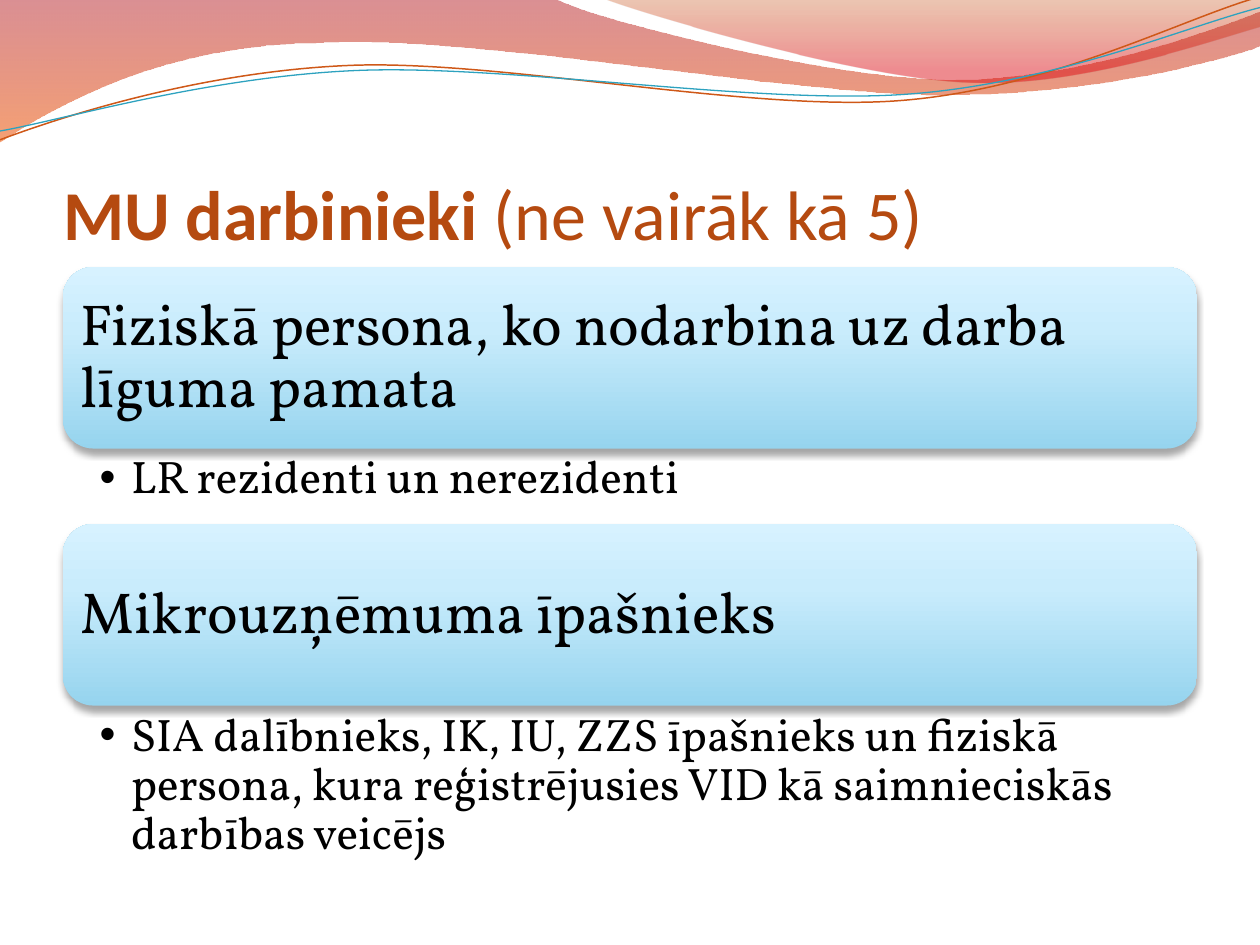
from pptx import Presentation
from pptx.dml.color import RGBColor
from pptx.enum.shapes import MSO_SHAPE
from pptx.enum.text import MSO_ANCHOR, MSO_AUTO_SIZE, PP_ALIGN
from pptx.oxml import parse_xml
from pptx.oxml.ns import nsdecls
from pptx.util import Inches, Pt

BODY_FONT = "Vollkorn"

# Wave outlines: a two-number step is a straight line, a six-number step a Bezier curve
BROAD_WAVE = [(0, -0.01), (4.4, -0.01), (4.76, 0.17, 6.64, 0.63, 7.58, 0.63),
              (8.53, 0.63, 9.58, 0.26, 10, 0.09), (10.01, 0.36),
              (9.83, 0.44, 8.7, 0.76, 7.46, 0.75), (6.22, 0.75, 3.82, 0.28, 2.57, 0.34),
              (1.29, 0.35, 0.46, 0.83, -0.01, 1.13), (0, -0.01)]
RIGHT_WAVE = [(4.79, -0.01), (5.09, 0.11, 6.82, 0.62, 7.69, 0.65),
              (8.56, 0.69, 9.61, 0.32, 10, 0.21), (10, 0), (4.79, -0.01)]
ORANGE_CURVE = [(0, 1.11), (0.48, 0.93, 1.58, 0.57, 2.77, 0.52),
                (3.95, 0.47, 5.93, 0.89, 7.13, 0.8), (8.33, 0.71, 9.38, 0.15, 9.98, -0.02)]
BLUE_CURVE = [(0, 1.04), (0.47, 0.96, 1.64, 0.61, 2.83, 0.56),
              (4.03, 0.51, 5.97, 0.83, 7.17, 0.75), (8.36, 0.67, 9.41, 0.21, 10, 0.06)]

BOX_GRADIENT = [(0, "96D4EE", 100), (65, "C9ECFC", 100), (100, "D7F2FF", 100)]

# Heading, detail, height of the detail
SECTIONS = [
    ("Fiziskā persona, ko nodarbina uz darba līguma pamata",
     "LR rezidenti un nerezidenti", 0.6),
    ("Mikrouzņēmuma īpašnieks",
     "SIA dalībnieks, IK, IU, ZZS īpašnieks un fiziskā persona, kura reģistrējusies "
     "VID kā saimnieciskās darbības veicējs", 1.31),
]


def color(value):
    return RGBColor.from_string(value)


def add_run(paragraph, text, *, size, font, fill="000000", bold=False):
    run = paragraph.add_run()
    run.text = text
    run.font.size = Pt(size)
    run.font.name = font
    run.font.bold = bold
    run.font.color.rgb = color(fill)


def format_frame(frame, *, insets, anchor):
    frame.word_wrap = True
    frame.auto_size = MSO_AUTO_SIZE.NONE
    frame.vertical_anchor = anchor
    frame.margin_left, frame.margin_top, frame.margin_right, frame.margin_bottom = map(
        Inches, insets)


def set_gradient(shape, stops, angle):
    """Fill with (position, colour, opacity) stops, all but the angle in percent."""
    shape.fill.background()
    stop_xml = "".join(
        f'<a:gs pos="{position * 1000}"><a:srgbClr val="{value}">'
        f'<a:alpha val="{opacity * 1000}"/></a:srgbClr></a:gs>'
        for position, value, opacity in stops)
    gradient = parse_xml(
        f'<a:gradFill {nsdecls("a")} rotWithShape="1"><a:gsLst>{stop_xml}</a:gsLst>'
        f'<a:lin ang="{angle * 60000}" scaled="0"/></a:gradFill>')
    properties = shape.element.spPr
    properties.replace(properties.find("{*}noFill"), gradient)


def add_shadow(shape):
    shape.shadow.inherit = False
    shape.element.spPr.find("{*}effectLst").append(parse_xml(
        f'<a:outerShdw {nsdecls("a")} blurRad="{Pt(4)}" dist="{Pt(3)}" dir="5400000" '
        'rotWithShape="0"><a:srgbClr val="000000"><a:alpha val="35000"/></a:srgbClr>'
        '</a:outerShdw>'))


def bend_segments(shape, steps):
    """Join the three line segments of each six-number step into one Bezier curve."""
    segments = iter(shape.element.spPr.findall(".//{*}lnTo"))
    for step in steps[1:]:
        group = [next(segments) for _ in range(len(step) // 2)]
        if len(group) == 3:
            curve = parse_xml(f'<a:cubicBezTo {nsdecls("a")}/>')
            group[0].addprevious(curve)
            for segment in group:
                curve.append(segment[0])
                segment.getparent().remove(segment)


def add_outline(slide, steps, *, close):
    points = [(Inches(x), Inches(y))
              for step in steps for x, y in zip(step[::2], step[1::2])]
    builder = slide.shapes.build_freeform(*points[0])
    builder.add_line_segments(points[1:], close=close)
    shape = builder.convert_to_shape()
    bend_segments(shape, steps)
    shape.shadow.inherit = False
    return shape


def add_wave(slide, steps, stops):
    wave = add_outline(slide, steps, close=True)
    set_gradient(wave, stops, 90)
    wave.line.fill.background()


def add_curve(slide, steps, line_color, width):
    curve = add_outline(slide, steps, close=False)
    curve.fill.background()
    curve.line.color.rgb = color(line_color)
    curve.line.width = Pt(width)


def set_title(slide):
    title = slide.shapes.title
    title.left, title.top, title.width, title.height = map(Inches, (0.5, 0.77, 9, 1.25))
    format_frame(title.text_frame, insets=(0, 0.05, 0, 0), anchor=MSO_ANCHOR.BOTTOM)
    paragraph = title.text_frame.paragraphs[0]
    paragraph.alignment = PP_ALIGN.LEFT
    for text, bold in (("MU darbinieki ", True), ("(ne vairāk kā 5)", False)):
        add_run(paragraph, text, size=40, font="Calibri", fill="B54A10", bold=bold)


def add_heading_box(slide, text, top, height):
    box = slide.shapes.add_shape(MSO_SHAPE.ROUNDED_RECTANGLE, Inches(0.5), Inches(top),
                                 Inches(9), Inches(height))
    set_gradient(box, BOX_GRADIENT, 270)
    box.line.fill.background()
    add_shadow(box)
    # The corners inset the text by 0.07 more
    format_frame(box.text_frame, insets=(0.07,) * 4, anchor=MSO_ANCHOR.MIDDLE)
    paragraph = box.text_frame.paragraphs[0]
    paragraph.alignment = PP_ALIGN.LEFT
    paragraph.line_spacing = 0.9
    add_run(paragraph, text, size=33, font=BODY_FONT)


def add_detail(slide, text, top, height):
    box = slide.shapes.add_textbox(Inches(0.5), Inches(top), Inches(9), Inches(height))
    format_frame(box.text_frame, insets=(0.29, 0.05, 0.26, 0.05), anchor=MSO_ANCHOR.TOP)
    paragraph = box.text_frame.paragraphs[0]
    paragraph.level = 1
    paragraph.line_spacing = 0.9
    add_run(paragraph, text, size=26, font=BODY_FONT)
    properties = paragraph._p.get_or_add_pPr()
    properties.set("marL", str(Inches(0.25)))
    properties.set("indent", str(Inches(-0.25)))
    properties.append(parse_xml(f'<a:buFont {nsdecls("a")} typeface="Arial"/>'))
    properties.append(parse_xml(f'<a:buChar {nsdecls("a")} char="•"/>'))


def main():
    presentation = Presentation()
    presentation.slide_width, presentation.slide_height = Inches(10), Inches(7.5)
    slide = presentation.slides.add_slide(presentation.slide_layouts[5])

    # Decoration along the top
    add_wave(slide, BROAD_WAVE, [(0, "AF0911", 45), (100, "EE5300", 55)])
    add_wave(slide, RIGHT_WAVE, [(0, "C24400", 30), (80, "DC000B", 45)])
    add_curve(slide, ORANGE_CURVE, "CF5818", 0.85)
    add_curve(slide, BLUE_CURVE, "2DA2BF", 0.75)

    set_title(slide)

    # Headings, each with its detail below
    top, heading_height = 2.12, 1.44
    for heading, detail, detail_height in SECTIONS:
        add_heading_box(slide, heading, top, heading_height)
        add_detail(slide, detail, top + heading_height, detail_height)
        top += heading_height + detail_height

    presentation.save("out.pptx")


if __name__ == "__main__":
    main()
